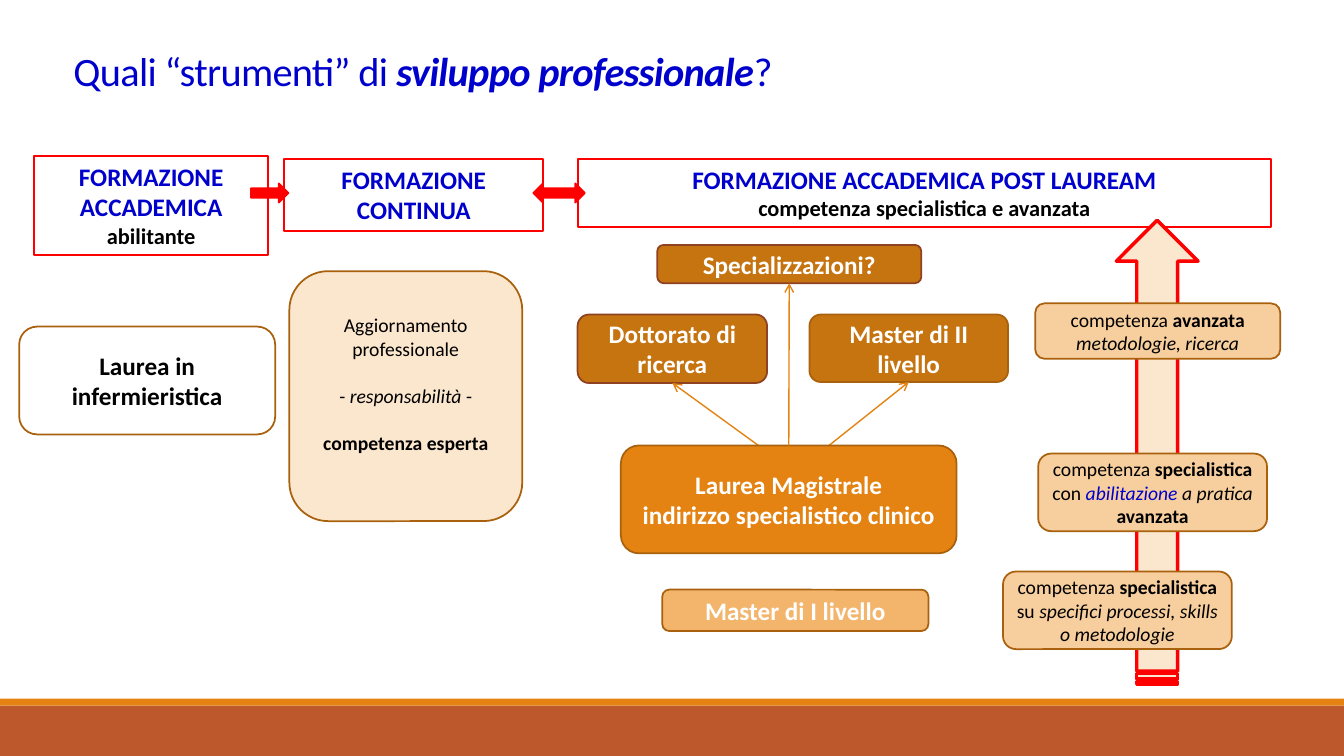
from dataclasses import dataclass

from pptx import Presentation
from pptx import util as u
from pptx.dml.color import RGBColor
from pptx.enum import shapes, text
from pptx.oxml.ns import qn
from pptx.oxml.xmlchemy import OxmlElement

SLIDE_W, SLIDE_H = u.Inches(13.33), u.Inches(7.5)
COL, ROW = SLIDE_W / 100, SLIDE_H / 100
Preset = shapes.MSO_SHAPE
ROUND, RECT = Preset.ROUNDED_RECTANGLE, Preset.RECTANGLE


@dataclass(frozen=True)
class Theme:
    font: str = "Calibri"
    title: float = 28.8
    heading: int = 18
    subheading: int = 16
    body: int = 14
    outline: float = 1.25
    arrow_outline: float = 2.5
    connector: int = 1
    blue: str = "0000CC"
    black: str = "000000"
    white: str = "FFFFFF"
    red: str = "FF0000"
    orange: str = "E48312"
    rust: str = "BD582C"
    brown: str = "A9610D"
    dark_brown: str = "8E4221"
    ochre: str = "C67410"
    apricot: str = "F3B56C"
    peach: str = "F7CE9D"
    cream: str = "FBE6CE"


T = Theme()


@dataclass(frozen=True)
class Box:
    left: float
    top: float
    width: float
    height: float

    def inner(self, left, top, width, height):
        return Box(self.left + left, self.top + top, width, height)

    def emu(self):
        return [round(v) for v in (self.left * COL, self.top * ROW,
                                   self.width * COL, self.height * ROW)]


def rgb(value):
    return RGBColor.from_string(value)


def block(slide, preset, box, fill=None, line=None, weight=T.outline):
    shape = slide.shapes.add_shape(preset, *box.emu())
    shape.shadow.inherit = False
    if fill:
        shape.fill.solid()
        shape.fill.fore_color.rgb = rgb(fill)
    else:
        shape.fill.background()
    if line:
        shape.line.color.rgb = rgb(line)
        shape.line.width = u.Pt(weight)
    else:
        shape.line.fill.background()
    return shape


def write(shape, paragraphs, anchor=text.MSO_ANCHOR.MIDDLE,
          align=text.PP_ALIGN.CENTER, gap=0):
    frame = shape.text_frame
    frame.word_wrap = True
    frame.vertical_anchor = anchor
    for index, (size, color, runs) in enumerate(paragraphs):
        paragraph = frame.add_paragraph() if index else frame.paragraphs[0]
        paragraph.alignment = align
        paragraph.space_before = u.Pt(gap if index else 0)
        font = paragraph.font
        font.name, font.size, font.color.rgb = T.font, u.Pt(size), rgb(color)
        shared = {style for _, style, *_ in runs}
        if len(shared) == 1:
            font.bold, font.italic = "b" in runs[0][1], "i" in runs[0][1]
        for words, style, *tint in runs:
            run = paragraph.add_run()
            run.text = words
            if len(shared) > 1:
                run.font.bold, run.font.italic = "b" in style, "i" in style
            if tint:
                run.font.color.rgb = rgb(tint[0])
    return shape


def label(slide, box, words, fill=None, line=T.brown, color=T.white):
    lines = [(T.heading, color, [(row, "b")]) for row in words]
    return write(block(slide, ROUND, box, fill, line), lines)


def pointer(slide, start, target, source=None):
    x, y = round(start[0] * COL), round(start[1] * ROW)
    arrow = slide.shapes.add_connector(shapes.MSO_CONNECTOR.STRAIGHT, x, y, x, y)
    if source:
        arrow.begin_connect(source, 0)
    arrow.end_connect(target, 2)
    arrow.line.color.rgb = rgb(T.orange)
    arrow.line.width = u.Pt(T.connector)
    properties = arrow._element.spPr
    tip = OxmlElement("a:tailEnd")
    tip.set("type", "arrow")
    properties.find(qn("a:ln")).append(tip)
    properties.append(OxmlElement("a:effectLst"))


def footer(slide, box):
    stripe = 0.93
    block(slide, RECT, box.inner(0, stripe, box.width, box.height - stripe), T.rust)
    block(slide, RECT, box.inner(0, 0, box.width, stripe), T.orange)


def title(slide, box):
    heading = slide.shapes.add_textbox(*box.emu())
    write(heading, [(T.title, T.blue, [("Quali “strumenti” di ", ""),
                                       ("sviluppo professionale", "bi"), ("?", "")])],
          text.MSO_ANCHOR.BOTTOM, text.PP_ALIGN.LEFT)
    paragraph = heading.text_frame.paragraphs[0]
    paragraph.line_spacing = 0.85
    for run in paragraph.runs:
        run._r.get_or_add_rPr().set("spc", "-50")


def training_steps(slide, box):
    steps = [
        ((18.6, 0.4, 19.28, 9.47), "FORMAZIONE CONTINUA", None),
        ((40.43, 0.4, 51.6, 8.93), "FORMAZIONE ACCADEMICA POST LAUREAM",
         "competenza specialistica e avanzata"),
        ((0, 0, 17.4, 13.07), "FORMAZIONE ACCADEMICA", "abilitante"),
    ]
    for place, name, outcome in steps:
        lines = [(T.heading, T.blue, [(name, "b")])]
        if outcome:
            lines.append((T.subheading, T.black, [(outcome, "b")]))
        write(block(slide, RECT, box.inner(*place), line=T.red), lines,
              text.MSO_ANCHOR.TOP)
    for preset, left, width in ((Preset.LEFT_RIGHT_ARROW, 37.13, 3.83),
                                (Preset.RIGHT_ARROW, 16.13, 2.78)):
        block(slide, preset, box.inner(left, 3.6, width, 2.53), T.red, T.red)


def basic_training(slide, box):
    label(slide, box.inner(0, 7.33, 19.05, 14.27), ["Laurea in infermieristica"],
          color=T.black)
    update = block(slide, ROUND, box.inner(20.1, 0, 17.33, box.height), T.cream, T.brown)
    write(update, [(T.body, T.black, [(words, style)]) for words, style in (
        ("Aggiornamento professionale", ""),
        ("- responsabilità -", "i"),
        ("competenza esperta", "b"))], gap=17)
    update.text_frame.margin_bottom = u.Inches(0.29)
    responsibility = update.text_frame.paragraphs[1]
    responsibility.font.italic = None
    responsibility.clear()
    for words, italic in (("- ", False), ("responsabilità", True), (" -", False)):
        run = responsibility.add_run()
        run.text, run.font.italic = words, italic


def postgraduate_paths(slide, box):
    specialisation = label(slide, box.inner(5.92, 0, 19.65, 5.07),
                           ["Specializzazioni?"], T.ochre, T.dark_brown)
    doctorate = label(slide, box.inner(0, 9.2, 14.1, 9.07),
                      ["Dottorato di ricerca"], T.ochre, T.dark_brown)
    second_master = label(slide, box.inner(17.25, 9.2, 14.78, 8.93),
                          ["Master di II livello"], T.ochre)
    for left, top, target in ((15.52, 29.2, doctorate), (17.47, 28.27, second_master)):
        pointer(slide, (box.left + left, box.top + top), target)
    degree = label(slide, box.inner(3.22, 26.53, 24.98, 14.27),
                   ["Laurea Magistrale", "indirizzo specialistico clinico"], T.orange)
    pointer(slide, (box.left, box.top), specialisation, degree)
    label(slide, box.inner(6.3, 45.6, 19.8, 5.47), ["Master di I livello"], T.apricot)


def competence_ladder(slide, box):
    growth = block(slide, Preset.STRIPED_RIGHT_ARROW,
                   box.inner(8.43, 0, 6.08, box.height), T.cream, T.red, T.arrow_outline)
    middle_x = growth.left + growth.width // 2
    middle_y = growth.top + growth.height // 2
    growth.width, growth.height = growth.height, growth.width
    growth.left = middle_x - growth.width // 2
    growth.top = middle_y - growth.height // 2
    growth.rotation = 270
    levels = [
        ((0, 46.47, 17.03, 10.27),
         [("specialistica", "b"), (" su ", ""),
          ("specifici processi, skills o metodologie", "i")]),
        ((2.62, 30.87, 17.03, 10.27),
         [("specialistica", "b"), (" con ", ""), ("abilitazione", "i", T.blue),
          (" a pratica ", "i"), ("avanzata", "b")]),
        ((2.4, 11, 18.23, 7.33),
         [("avanzata ", "b"), ("metodologie, ricerca", "i")]),
    ]
    for place, runs in levels:
        write(block(slide, ROUND, box.inner(*place), T.peach, T.brown),
              [(T.body, T.black, [("competenza ", "")] + runs)])


def main():
    deck = Presentation()
    deck.slide_width, deck.slide_height = SLIDE_W, SLIDE_H
    slide = deck.slides.add_slide(deck.slide_layouts[6])
    footer(slide, Box(0, 92.4, 100, 7.6))
    title(slide, Box(4.73, 6, 91.2, 7.2))
    training_steps(slide, Box(2.55, 20.67, 92.03, 13.07))
    basic_training(slide, Box(1.43, 35.87, 37.43, 33.07))
    postgraduate_paths(slide, Box(42.98, 32.4, 32.03, 51.07))
    competence_ladder(slide, Box(74.63, 29.13, 20.63, 61.33))
    deck.save("out.pptx")


if __name__ == "__main__":
    main()
